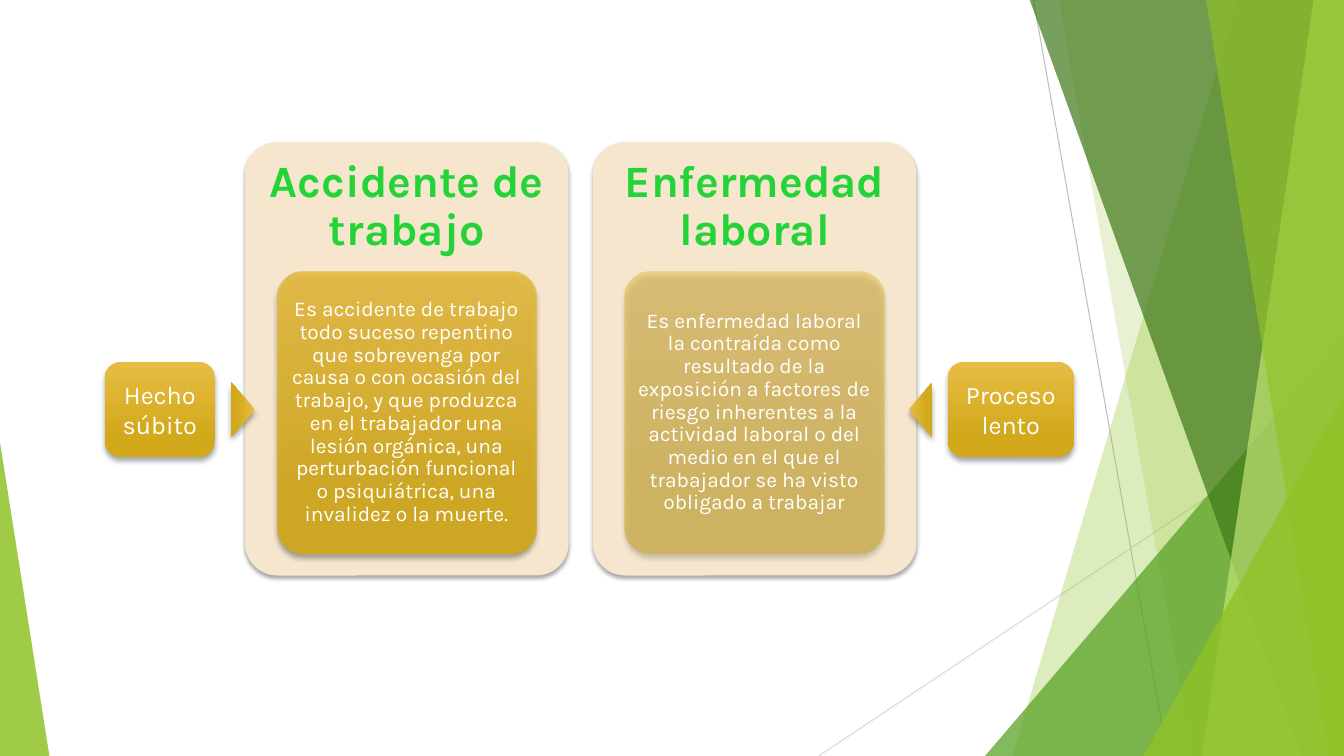
from dataclasses import dataclass

from lxml.etree import SubElement
from pptx import Presentation
from pptx.dml.color import RGBColor
from pptx.enum.shapes import MSO_CONNECTOR, MSO_SHAPE
from pptx.enum.text import MSO_ANCHOR, PP_ALIGN
from pptx.oxml.ns import qn
from pptx.util import Emu, Pt

PX = 9144
WIDTH, HEIGHT = 1333, 750
FONT = "Karla"
COLORS = {
    "lime": "90C226",
    "pale_lime": "C0E474",
    "green": "54A021",
    "dark_green": "3F7819",
    "grey": "BFBFBF",
    "light_grey": "D9D9D9",
    "cream": "F5E6CD",
    "gold_top": "E7BC43",
    "gold_bottom": "D2A91B",
    "title": "23D338",
    "white": "FFFFFF",
    "black": "000000",
}


@dataclass(frozen=True)
class Box:
    x: int
    y: int
    w: int
    h: int


@dataclass(frozen=True)
class Ray:
    start: tuple[int, int]
    end: tuple[int, int]
    color: str


@dataclass(frozen=True)
class Band:
    top: int
    top_right: int
    bottom: int
    color: str
    alpha: int


@dataclass(frozen=True)
class Wedge:
    box: Box
    apex: int
    color: str
    alpha: int


@dataclass(frozen=True)
class Card:
    x: int
    title: str
    body: str
    alpha: int


@dataclass(frozen=True)
class Tag:
    box: Box
    text: str
    arrow_x: int
    rotation: int


RAYS = [
    Ray((1025, 0), (1158, HEIGHT), "grey"),
    Ray((WIDTH, 403), (812, HEIGHT), "light_grey"),
]
BACKDROP = [
    Band(1228, WIDTH, 1004, "lime", 30),
    Band(1050, WIDTH, 1183, "lime", 20),
    Wedge(Box(977, 333, 356, 417), 1, "green", 72),
    Band(1021, WIDTH, 1291, "dark_green", 70),
    Band(1303, WIDTH, 1192, "pale_lime", 70),
    Band(1196, WIDTH, 1318, "lime", 65),
    Wedge(Box(1134, 393, 199, 357), 1, "lime", 80),
    Wedge(Box(0, 439, 49, 311), 0, "lime", 85),
]
CARDS = [
    Card(243, "Accidente de trabajo",
         "Es accidente de trabajo todo suceso repentino que sobrevenga por causa "
         "o con ocasión del trabajo, y que produzca en el trabajador una lesión "
         "orgánica, una perturbación funcional o psiquiátrica, una invalidez o "
         "la muerte.", 90),
    Card(588, "Enfermedad laboral",
         "Es enfermedad laboral la contraída como resultado de la exposición a "
         "factores de riesgo inherentes a la actividad laboral o del medio en el "
         "que el trabajador se ha visto obligado a trabajar", 50),
]
TAGS = [
    Tag(Box(104, 359, 109, 94), "Hecho súbito", 214, 90),
    Tag(Box(940, 359, 125, 94), "Proceso lento", 886, 270),
]


def rgb(name: str) -> RGBColor:
    return RGBColor.from_string(COLORS[name])


def emu(box: Box) -> tuple[Emu, ...]:
    return tuple(Emu(v * PX) for v in (box.x, box.y, box.w, box.h))


def add_color(parent, name: str, alpha: int) -> None:
    clr = SubElement(parent, qn("a:srgbClr"), val=COLORS[name])
    SubElement(clr, qn("a:alpha"), val=str(alpha * 1000))


def fill_solid(sp, color: str, alpha: int = 100) -> None:
    sp.shadow.inherit = False
    sp.line.fill.background()
    sp.fill.solid()
    sp.fill.fore_color.rgb = rgb(color)
    if alpha < 100:
        clr = sp._element.spPr.find(qn("a:solidFill"))[0]
        SubElement(clr, qn("a:alpha"), val=str(alpha * 1000))


def fill_gold(sp, alpha: int = 100) -> None:
    sp.shadow.inherit = False
    sp.line.fill.background()
    sp.fill.gradient()
    grad = sp._element.spPr.find(qn("a:gradFill"))
    for child in list(grad):
        grad.remove(child)
    stops = SubElement(grad, qn("a:gsLst"))
    for pos, color in ((0, "gold_top"), (78, "gold_bottom")):
        stop = SubElement(stops, qn("a:gs"), pos=str(pos * 1000))
        add_color(stop, color, alpha)
    SubElement(grad, qn("a:lin"), ang="5400000", scaled="0")


def add_shadow(sp, blur: int, dist: int) -> None:
    effects = sp._element.spPr.find(qn("a:effectLst"))
    shadow = SubElement(effects, qn("a:outerShdw"), blurRad=str(Pt(blur)),
                        dist=str(Pt(dist)), dir="5400000", rotWithShape="0")
    add_color(shadow, "black", 35)


def write(sp, text: str, size: int, color: str, bold: bool = False,
          spacing: float = 1.0, inset: tuple[int, int] = (10, 5)) -> None:
    tf = sp.text_frame
    tf.word_wrap = True
    tf.vertical_anchor = MSO_ANCHOR.MIDDLE
    tf.margin_left = tf.margin_right = Emu(inset[0] * PX)
    tf.margin_top = tf.margin_bottom = Emu(inset[1] * PX)
    tf.text = text
    p = tf.paragraphs[0]
    p.alignment = PP_ALIGN.CENTER
    p.line_spacing = spacing
    font = p.runs[0].font
    font.name, font.size, font.bold = FONT, Pt(size), bold
    font.color.rgb = rgb(color)


def draw_ray(s, ray: Ray) -> None:
    ends = [Emu(v * PX) for v in (*ray.start, *ray.end)]
    line = s.shapes.add_connector(MSO_CONNECTOR.STRAIGHT, *ends)
    line.line.color.rgb = rgb(ray.color)
    line.line.width = Pt(0.75)
    SubElement(line._element.spPr, qn("a:effectLst"))


def draw_band(s, band: Band) -> None:
    builder = s.shapes.build_freeform(band.top, -1, scale=PX)
    builder.add_line_segments(
        [(band.top_right, -1), (WIDTH, HEIGHT), (band.bottom, HEIGHT)], close=True)
    fill_solid(builder.convert_to_shape(), band.color, band.alpha)


def draw_wedge(s, wedge: Wedge) -> None:
    sp = s.shapes.add_shape(MSO_SHAPE.ISOSCELES_TRIANGLE, *emu(wedge.box))
    sp.adjustments[0] = wedge.apex
    fill_solid(sp, wedge.color, wedge.alpha)


def draw_card(s, card: Card) -> None:
    panel = s.shapes.add_shape(MSO_SHAPE.ROUNDED_RECTANGLE, *emu(Box(card.x, 141, 321, 430)))
    panel.adjustments[0] = 0.1
    fill_solid(panel, "cream")
    add_shadow(panel, 3, 2)
    title = s.shapes.add_textbox(*emu(Box(card.x, 141, 321, 129)))
    write(title, card.title, 32, "title", True, 0.9, (13, 13))
    inner = s.shapes.add_shape(MSO_SHAPE.ROUNDED_RECTANGLE, *emu(Box(card.x + 32, 270, 257, 279)))
    inner.adjustments[0] = 0.1
    fill_gold(inner, card.alpha)
    add_shadow(inner, 4, 3)
    body = s.shapes.add_textbox(*emu(Box(card.x + 39, 277, 242, 264)))
    write(body, card.body, 15, "white", False, 0.9, (4, 3))


def draw_tag(s, tag: Tag) -> None:
    label = s.shapes.add_shape(MSO_SHAPE.ROUNDED_RECTANGLE, *emu(tag.box))
    write(label, tag.text, 18, "white")
    arrow = s.shapes.add_shape(MSO_SHAPE.ISOSCELES_TRIANGLE, *emu(Box(tag.arrow_x, 395, 54, 23)))
    arrow.rotation = tag.rotation
    for sp in (label, arrow):
        fill_gold(sp)
        add_shadow(sp, 4, 3)


def main() -> None:
    prs = Presentation()
    prs.slide_width, prs.slide_height = Emu(WIDTH * PX), Emu(HEIGHT * PX)
    s = prs.slides.add_slide(prs.slide_layouts[6])
    for ray in RAYS:
        draw_ray(s, ray)
    for part in BACKDROP:
        (draw_band if isinstance(part, Band) else draw_wedge)(s, part)
    for card in CARDS:
        draw_card(s, card)
    for tag in TAGS:
        draw_tag(s, tag)
    prs.save("out.pptx")


if __name__ == "__main__":
    main()
